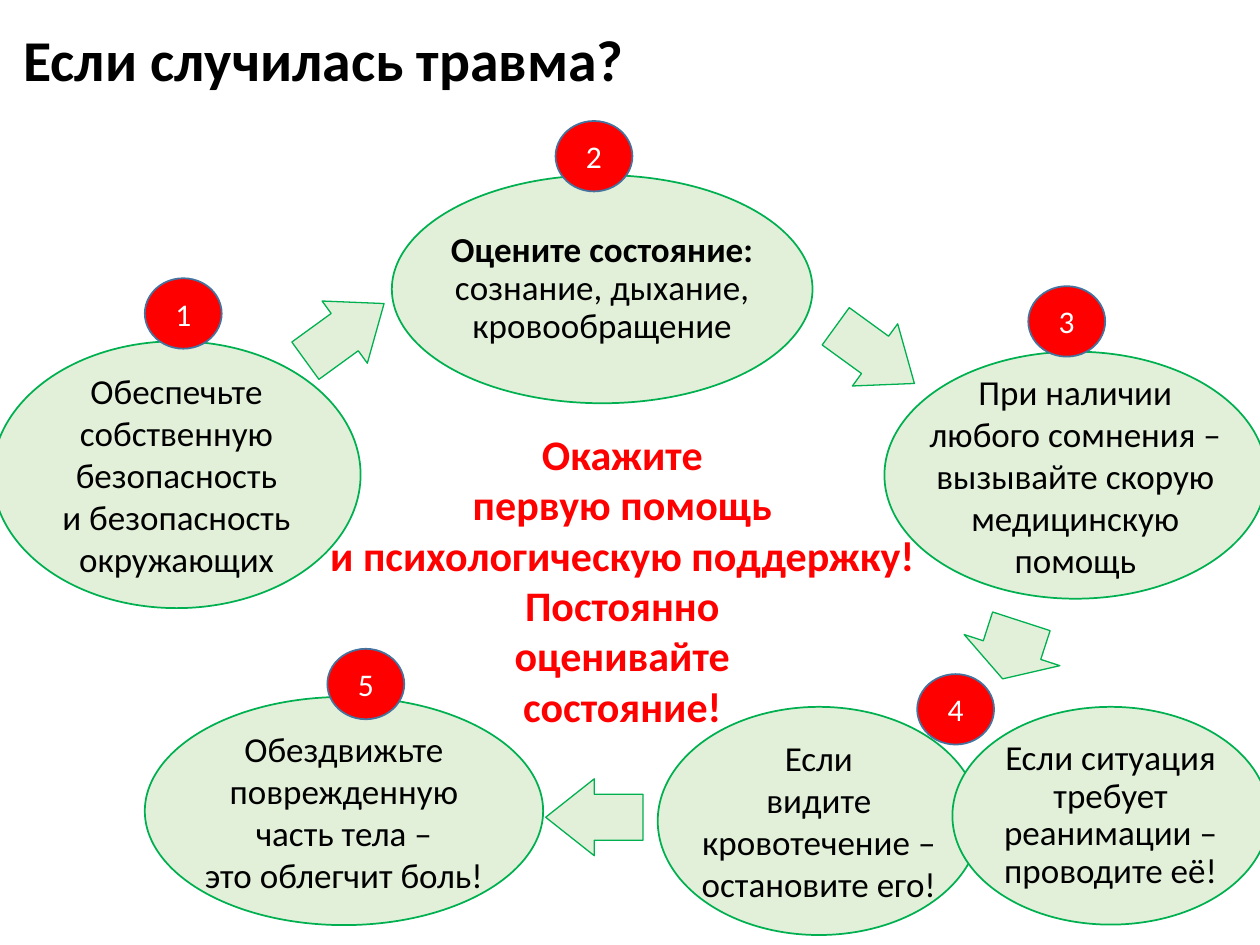
from pptx import Presentation
from pptx.dml.color import RGBColor
from pptx.enum.shapes import MSO_SHAPE
from pptx.enum.text import MSO_ANCHOR, PP_ALIGN
from pptx.util import Cm, Pt

ELLIPSE = MSO_SHAPE.OVAL
ARROW = MSO_SHAPE.RIGHT_ARROW
LEFT = PP_ALIGN.LEFT
CENTER = PP_ALIGN.CENTER
TOP = MSO_ANCHOR.TOP
MIDDLE = MSO_ANCHOR.MIDDLE

FONT = "Calibri"
BLACK = "000000"
WHITE = "FFFFFF"
RED = "FF0000"
PALE_GREEN = "E2F0D9"
GREEN = "00B050"
BLUE = "43739E"

BADGE_SIZE = (1.55, 1.42)
ARROW_SIZE = (1.96, 1.55)

STEPS = [
    {
        "box": (7.9, 3.53, 8.48, 4.6),
        "paragraphs": ["Оцените состояние:\vсознание, дыхание,\vкровообращение"],
        "number": "2", "badge_offset": (3.3, -1.09),
        "spacing": 0.9, "bold_lead": True,
    },
    {
        "box": (17.83, 7.09, 7.7, 4.98),
        "paragraphs": ["При наличии\vлюбого сомнения –\vвызывайте скорую\vмедицинскую\vпомощь"],
        "number": "3", "badge_offset": (2.9, -1.32),
    },
    {
        "box": (13.26, 14.25, 6.5, 4.6),
        "paragraphs": ["Если", "видите\vкровотечение –\vостановите его!"],
        "number": "4", "badge_offset": (5.23, -0.66),
    },
    {
        "box": (2.92, 14.05, 8.03, 4.6),
        "paragraphs": ["Обездвижьте\vповрежденную", "часть тела –", "это облегчит боль!"],
        "number": "5", "badge_offset": (3.68, -0.97),
    },
    {
        "box": (-0.15, 6.88, 7.42, 5.38),
        "paragraphs": ["Обеспечьте\vсобственную\vбезопасность", "и безопасность\vокружающих"],
        "number": "1", "badge_offset": (3.07, -1.27),
    },
    {
        "box": (19.2, 14.25, 6.38, 4.39),
        "paragraphs": ["Если ситуация\vтребует\vреанимации –\vпроводите её!"],
        "spacing": 0.9,
    },
]

ARROWS = [
    ((16.66, 6.38, *ARROW_SIZE), 36),
    ((19.79, 12.09, 1.22, 2.03), 108),
    ((11, 15.7, *ARROW_SIZE), 180),
    ((5.97, 5.92, *ARROW_SIZE), 324),
]


def color(value):
    return RGBColor.from_string(value)


def write_text(shape, paragraphs, size, text_color=BLACK, bold=False, bold_lead=False,
               align=CENTER, anchor=MIDDLE, spacing=1.0, wrap=True):
    frame = shape.text_frame
    frame.word_wrap = wrap
    frame.vertical_anchor = anchor
    for index, text in enumerate(paragraphs):
        paragraph = frame.add_paragraph() if index else frame.paragraphs[0]
        paragraph.text = text
        paragraph.alignment = align
        paragraph.line_spacing = spacing
        for position, run in enumerate(paragraph.runs):
            run.font.name = FONT
            run.font.size = Pt(size)
            run.font.bold = bold or (bold_lead and index == position == 0)
            run.font.color.rgb = color(text_color)


def add_filled_shape(slide, kind, box, fill, line, line_width):
    shape = slide.shapes.add_shape(kind, *map(Cm, box))
    shape.shadow.inherit = False
    shape.fill.solid()
    shape.fill.fore_color.rgb = color(fill)
    shape.line.color.rgb = color(line)
    shape.line.width = Pt(line_width)
    return shape


def add_text_box(slide, box, paragraphs, **text_format):
    write_text(slide.shapes.add_textbox(*map(Cm, box)), paragraphs, **text_format)


def add_arrow(slide, box, rotation):
    arrow = add_filled_shape(slide, ARROW, box, PALE_GREEN, GREEN, 0.75)
    width, height = box[2:]
    arrow.adjustments[0] = 0.6
    arrow.adjustments[1] = width / 2 / min(width, height)
    arrow.rotation = rotation


def add_step(slide, box, paragraphs, number=None, badge_offset=(0, 0), **text_format):
    ellipse = add_filled_shape(slide, ELLIPSE, box, PALE_GREEN, GREEN, 1)
    frame = ellipse.text_frame
    frame.margin_left = frame.margin_right = frame.margin_top = frame.margin_bottom = 0
    write_text(ellipse, paragraphs, size=20, wrap=False, **text_format)
    if number:
        badge_box = (box[0] + badge_offset[0], box[1] + badge_offset[1], *BADGE_SIZE)
        badge = add_filled_shape(slide, ELLIPSE, badge_box, RED, BLUE, 1)
        write_text(badge, [number], size=18, text_color=WHITE)


def main():
    presentation = Presentation()
    presentation.slide_width = Cm(25.4)
    presentation.slide_height = Cm(19.05)
    slide = presentation.slides.add_slide(presentation.slide_layouts[6])

    add_text_box(slide, (0.23, 0.3, 22.86, 1.93), ["Если случилась травма?"],
                 size=33, bold=True, align=LEFT, spacing=0.9)
    add_text_box(slide, (4.52, 8.51, 16.05, 6.4),
                 ["Окажите", "первую помощь", "и психологическую поддержку!",
                  "Постоянно", "оценивайте", "состояние!"],
                 size=24, text_color=RED, bold=True, anchor=TOP)
    for box, rotation in ARROWS:
        add_arrow(slide, box, rotation)
    for step in STEPS:
        add_step(slide, **step)

    presentation.save("out.pptx")


if __name__ == "__main__":
    main()
